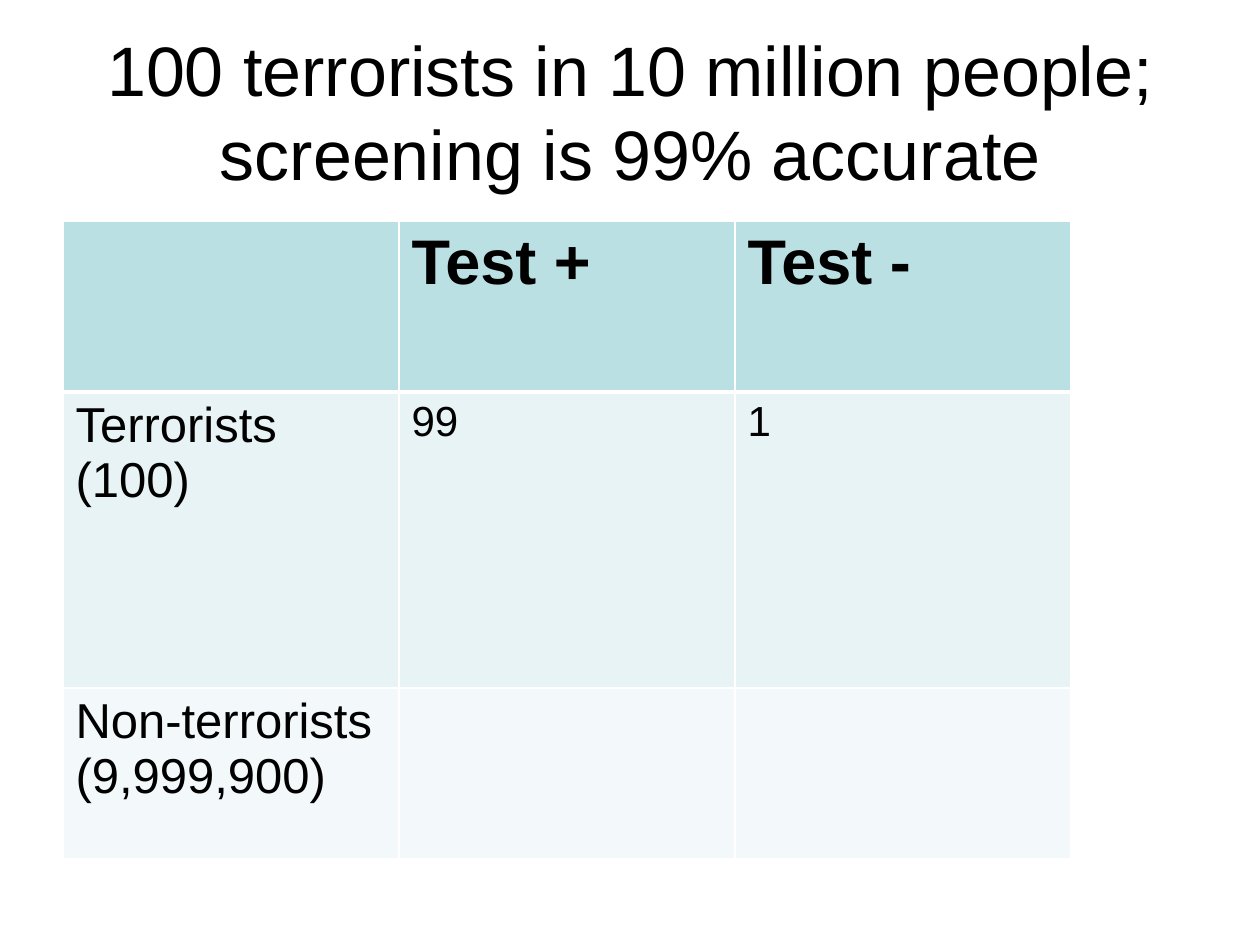
from dataclasses import dataclass

from lxml.etree import SubElement
from pptx import Presentation
from pptx.dml.color import RGBColor
from pptx.enum.text import MSO_ANCHOR, PP_ALIGN
from pptx.oxml.ns import qn
from pptx.slide import Slide
from pptx.table import _Cell
from pptx.text.text import _Paragraph
from pptx.util import Emu, Pt

EMU_PER_PX = 914400 / 126
FONT = "Arial"
COLORS = {
    "text": "000000",
    "border": "FFFFFF",
    "header": "BBE0E3",
    "terrorists": "E7F3F4",
    "others": "F3F9FA",
}


@dataclass(frozen=True)
class Entry:
    text: str = ""
    size: int = 18
    bold: bool = False


@dataclass(frozen=True)
class Row:
    height: int
    fill: str
    top_border: int
    bottom_border: int
    entries: tuple[Entry, ...]


ROWS = (
    Row(171, "header", 1, 3, (Entry(), Entry("Test +", 36, True), Entry("Test -", 36, True))),
    Row(296, "terrorists", 3, 1, (Entry("Terrorists\n(100)", 28), Entry("99", 24), Entry("1", 24))),
    Row(171, "others", 1, 1, (Entry("Non-terrorists (9,999,900)", 28), Entry(), Entry())),
)


def px(length: int) -> Emu:
    return Emu(round(length * EMU_PER_PX))


def style_paragraph(para: _Paragraph, size: int, bold: bool = False) -> None:
    para.font.name = FONT
    para.font.size = Pt(size)
    para.font.bold = bold
    para.font.color.rgb = RGBColor.from_string(COLORS["text"])


def add_border(cell: _Cell, side: str, points: int) -> None:
    properties = cell._tc.get_or_add_tcPr()
    line = SubElement(properties, qn(f"a:ln{side}"), w=str(Pt(points)))
    fill = SubElement(line, qn("a:solidFill"))
    SubElement(fill, qn("a:srgbClr"), val=COLORS["border"])


def draw_cell(cell: _Cell, entry: Entry, row: Row) -> None:
    borders = {"L": 1, "R": 1, "T": row.top_border, "B": row.bottom_border}
    for side, points in borders.items():
        add_border(cell, side, points)
    cell.fill.solid()
    cell.fill.fore_color.rgb = RGBColor.from_string(COLORS[row.fill])
    cell.text = entry.text
    for para in cell.text_frame.paragraphs:
        style_paragraph(para, entry.size, entry.bold)


def draw_title(page: Slide, text: str) -> None:
    box = page.shapes.add_textbox(px(63), px(32), px(1134), px(157))
    frame = box.text_frame
    frame.word_wrap = True
    frame.vertical_anchor = MSO_ANCHOR.MIDDLE
    para = frame.paragraphs[0]
    para.text = text
    para.alignment = PP_ALIGN.CENTER
    style_paragraph(para, 40)


def draw_table(page: Slide, rows: tuple[Row, ...]) -> None:
    height = sum(row.height for row in rows)
    columns = len(rows[0].entries)
    table = page.shapes.add_table(
        len(rows), columns, px(63), px(221), px(336 * columns), px(height)
    ).table
    for row_index, row in enumerate(rows):
        table.rows[row_index].height = px(row.height)
        for column_index, entry in enumerate(row.entries):
            draw_cell(table.cell(row_index, column_index), entry, row)


def main() -> None:
    deck = Presentation()
    deck.slide_width, deck.slide_height = px(1260), px(945)
    page = deck.slides.add_slide(deck.slide_layouts[6])
    draw_title(page, "100 terrorists in 10 million people; screening is 99% accurate")
    draw_table(page, ROWS)
    deck.save("out.pptx")


if __name__ == "__main__":
    main()
